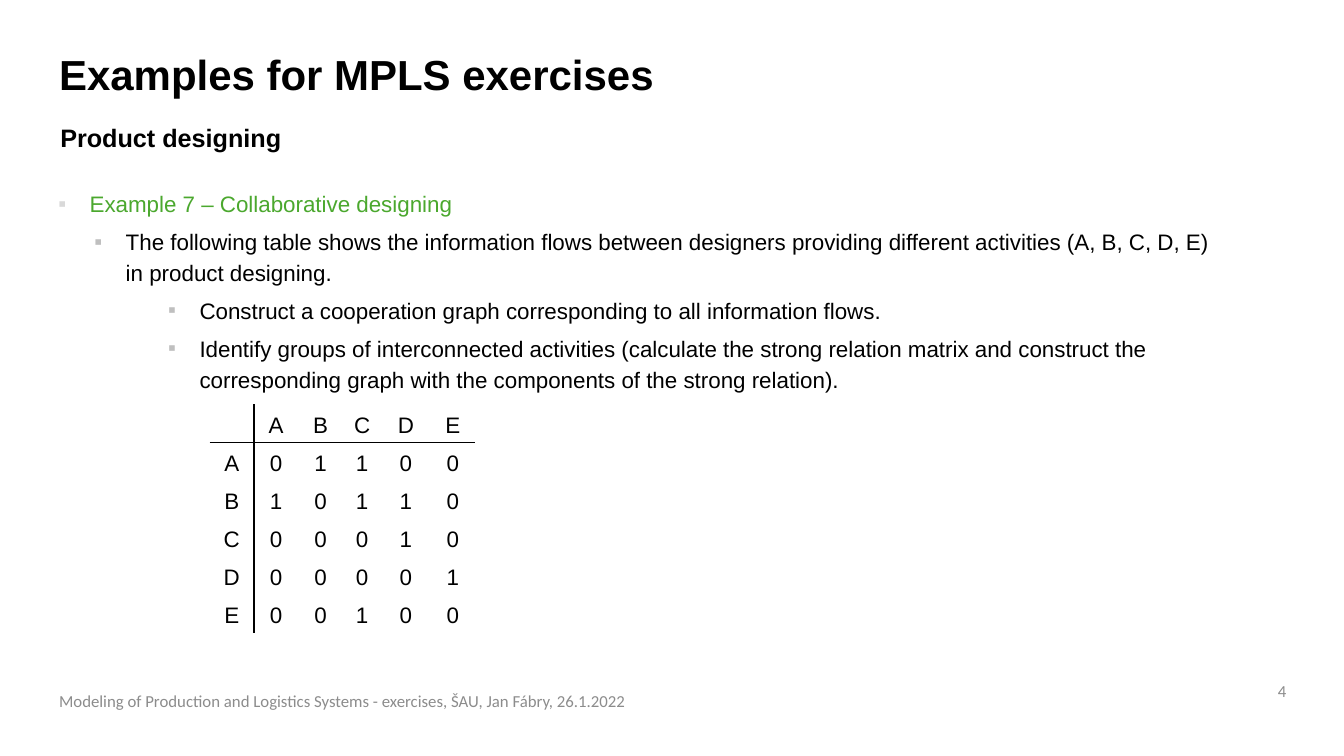
from lxml import etree
from pptx import Presentation
from pptx import util as u
from pptx.dml.color import RGBColor
from pptx.enum import text
from pptx.oxml.ns import qn

BLACK = RGBColor(0x00, 0x00, 0x00)
GREEN = RGBColor(0x4B, 0xA8, 0x2E)
GREY = RGBColor(0x8C, 0x8C, 0x8C)
LIGHT_GREY = RGBColor(0xD9, 0xD9, 0xD9)
MID_GREY = RGBColor(0xBF, 0xBF, 0xBF)

MIDDLE = text.MSO_ANCHOR.MIDDLE

# Text, level, indent in cm, space before in points, text colour, bullet colour
BULLETS = [
    ("Example 7 – Collaborative designing", 0, 0.79, 0, GREEN, LIGHT_GREY),
    ("The following table shows the information flows between designers providing "
     "different activities (A, B, C, D, E) in product designing.",
     1, 1.7, 5, BLACK, MID_GREY),
    ("Construct a cooperation graph corresponding to all information flows.",
     1, 3.56, 5, BLACK, MID_GREY),
    ("Identify groups of interconnected activities (calculate the strong relation matrix "
     "and construct the corresponding graph with the components of the strong relation).",
     1, 3.56, 5, BLACK, MID_GREY),
]
ACTIVITIES = "ABCDE"
FLOWS = ["01100", "10110", "00010", "00001", "00100"]
COLUMN_WIDTHS = [1.12, 1.12, 1.12, 0.97, 1.24, 1.12]
ROW_HEIGHT = 0.96


class SlideBuilder:
    font = "Arial"
    body_size = 16
    line_spacing = 1.15
    hanging = 0.79

    def __init__(self, presentation):
        self.slide = presentation.slides.add_slide(presentation.slide_layouts[6])

    def format_runs(self, paragraph, size, color, bold=False, font=None):
        for run in paragraph.runs:
            run.font.name = font or self.font
            run.font.size = u.Pt(size)
            run.font.bold = bold
            run.font.color.rgb = color

    def add_frame(self, box, anchor=text.MSO_ANCHOR.TOP, wrap=True):
        shape = self.slide.shapes.add_textbox(*(u.Cm(length) for length in box))
        frame = shape.text_frame
        frame.word_wrap = wrap
        frame.vertical_anchor = anchor
        return frame

    def add_label(self, box, wording, size, color=BLACK, bold=False, font=None, **layout):
        frame = self.add_frame(box, **layout)
        frame.text = wording
        self.format_runs(frame.paragraphs[0], size, color, bold, font)
        return frame

    def add_bullets(self, box, items):
        frame = self.add_frame(box)
        for index, (wording, level, indent, before, color, bullet_color) in enumerate(items):
            paragraph = frame.add_paragraph() if index else frame.paragraphs[0]
            paragraph.text = wording
            paragraph.level = level
            paragraph.line_spacing = self.line_spacing
            paragraph.space_before = u.Pt(before)
            self.add_bullet(paragraph, indent, bullet_color)
            self.format_runs(paragraph, self.body_size, color)

    def add_bullet(self, paragraph, indent, color):
        properties = paragraph._p.get_or_add_pPr()
        properties.set("marL", str(u.Cm(indent)))
        properties.set("indent", str(-u.Cm(self.hanging)))
        bullet_color = etree.SubElement(properties, qn("a:buClr"))
        etree.SubElement(bullet_color, qn("a:srgbClr"), val=str(color))
        etree.SubElement(properties, qn("a:buFont"), typeface=self.font)
        etree.SubElement(properties, qn("a:buChar"), char="▪")

    def add_matrix(self, left, top, rows):
        table = self.slide.shapes.add_table(
            len(rows), len(COLUMN_WIDTHS), u.Cm(left), u.Cm(top),
            u.Cm(sum(COLUMN_WIDTHS)), u.Cm(ROW_HEIGHT * len(rows))).table
        table.first_row = table.horz_banding = False
        for column, width in zip(table.columns, COLUMN_WIDTHS):
            column.width = u.Cm(width)
        for row_index, values in enumerate(rows):
            table.rows[row_index].height = u.Cm(ROW_HEIGHT)
            for column_index, value in enumerate(values):
                cell = table.cell(row_index, column_index)
                self.fill_cell(cell, value)
                # Rules follow the header row and the header column
                self.add_borders(cell, {
                    "L": column_index == 1, "R": column_index == 0,
                    "T": row_index == 1, "B": row_index == 0})
                cell.fill.background()

    def fill_cell(self, cell, value):
        cell.margin_left = cell.margin_right = u.Cm(0.18)
        cell.margin_top = cell.margin_bottom = 0
        cell.vertical_anchor = MIDDLE
        paragraph = cell.text_frame.paragraphs[0]
        paragraph.text = value
        paragraph.alignment = text.PP_ALIGN.CENTER
        paragraph.line_spacing = self.line_spacing
        self.format_runs(paragraph, self.body_size, BLACK)

    def add_borders(self, cell, sides):
        properties = cell._tc.get_or_add_tcPr()
        for side, ruled in sides.items():
            line = etree.SubElement(properties, qn(f"a:ln{side}"), w=str(u.Pt(1)))
            if ruled:
                fill = etree.SubElement(line, qn("a:solidFill"))
                etree.SubElement(fill, qn("a:srgbClr"), val=str(BLACK))
            else:
                etree.SubElement(line, qn("a:noFill"))


def main():
    presentation = Presentation()
    presentation.slide_width = u.Cm(33.87)
    presentation.slide_height = u.Cm(19.05)
    builder = SlideBuilder(presentation)

    # Page number and footer
    number = builder.add_label((31.78, 16.99, 0.89, 0.84), "4", 12, GREY,
                               font="Calibri", anchor=MIDDLE, wrap=False)
    number.paragraphs[0].alignment = text.PP_ALIGN.RIGHT
    builder.add_label(
        (1.24, 17.15, 18.21, 1.02),
        "Modeling of Production and Logistics Systems - exercises, ŠAU, Jan Fábry, 26.1.2022",
        12, GREY, font="Calibri", anchor=MIDDLE)

    # Task description
    builder.add_bullets((1.22, 4.57, 29.79, 12.42), BULLETS)

    # Title and subtitle
    title = builder.add_label((1.24, 1.24, 25.73, 1.45), "Examples for MPLS exercises",
                              30, bold=True)
    title.paragraphs[0].line_spacing = 0.9
    subtitle = builder.add_label((1.27, 2.97, 25.68, 1.02), "Product designing", 18, bold=True)
    subtitle.auto_size = text.MSO_AUTO_SIZE.SHAPE_TO_FIT_TEXT

    # Information flows between activities
    header = ["", *ACTIVITIES]
    flows = [[activity, *row] for activity, row in zip(ACTIVITIES, FLOWS)]
    builder.add_matrix(5.28, 10.19, [header, *flows])

    presentation.save("out.pptx")


if __name__ == "__main__":
    main()
